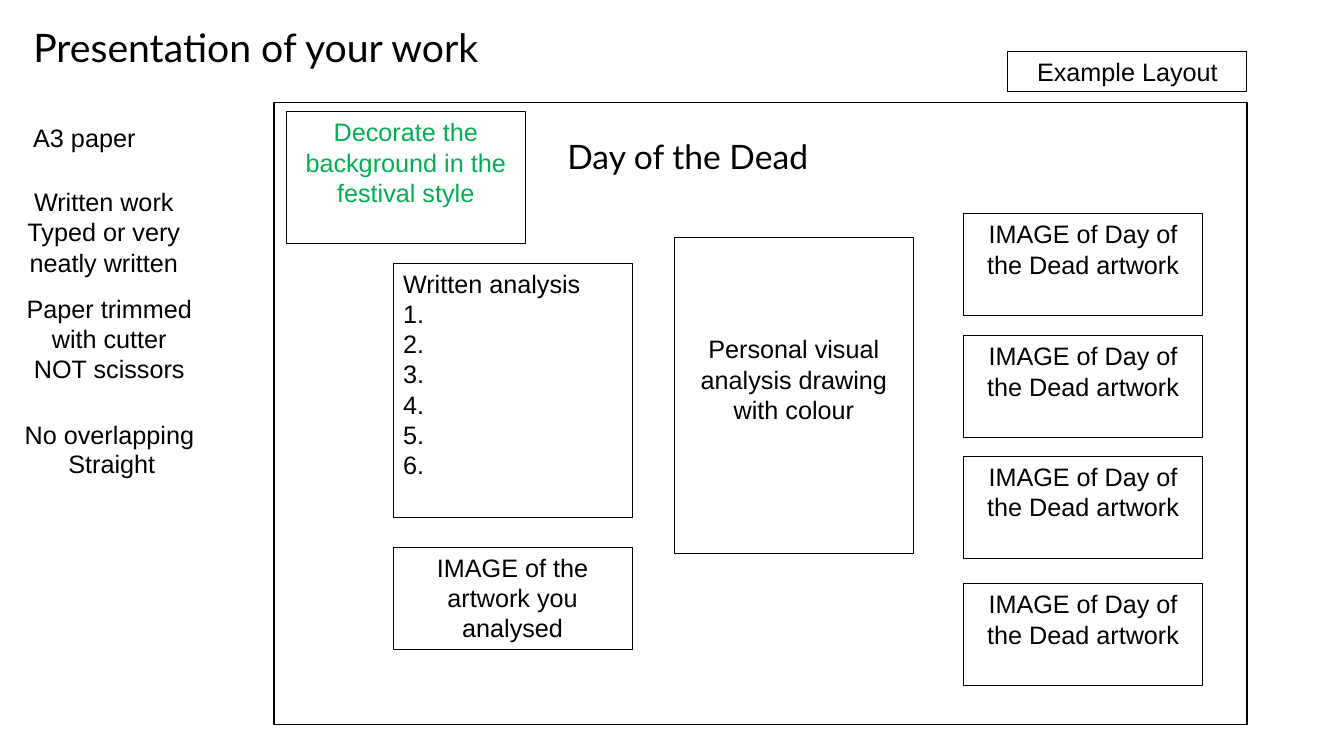
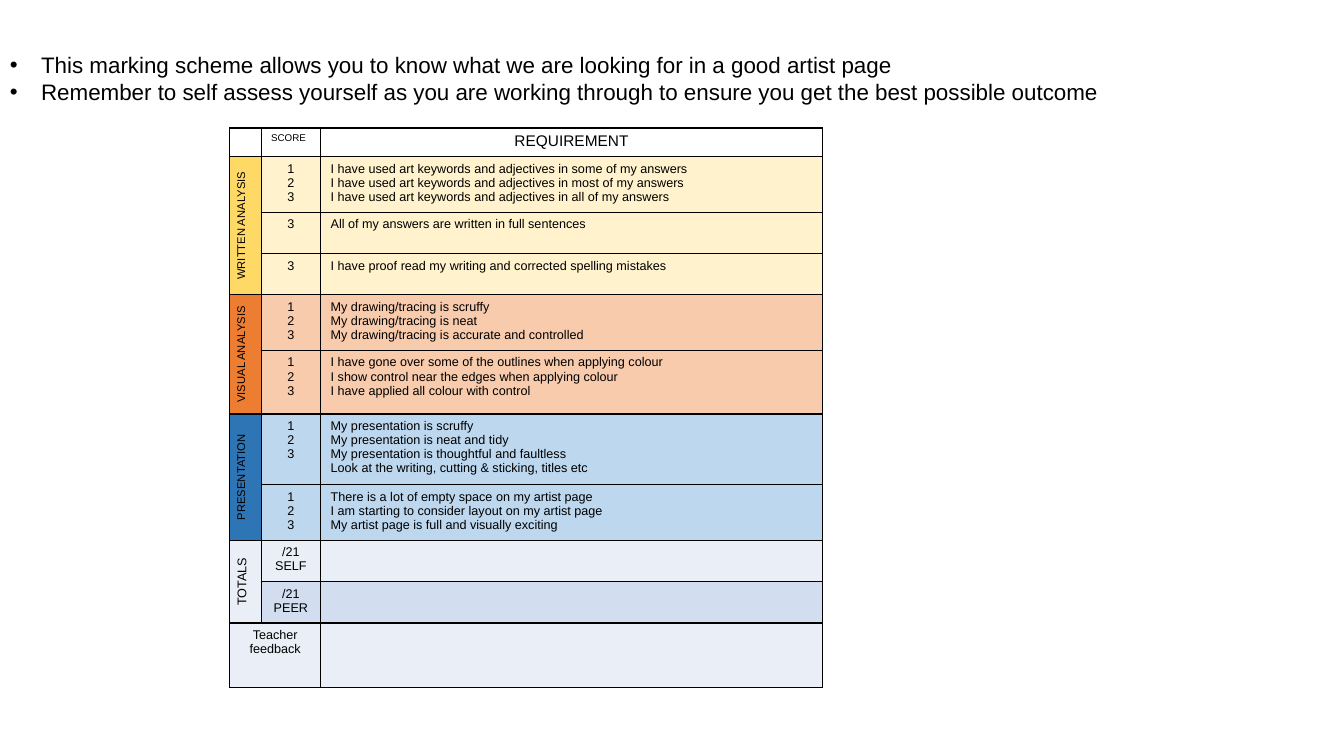
from lxml import etree
from pptx import Presentation
from pptx.dml.color import RGBColor
from pptx.enum.shapes import MSO_SHAPE
from pptx.enum.text import MSO_ANCHOR, PP_ALIGN
from pptx.oxml.ns import qn
from pptx.util import Inches, Pt

RECT = MSO_SHAPE.RECTANGLE
TOP = MSO_ANCHOR.TOP
LEFT, MID = PP_ALIGN.LEFT, PP_ALIGN.CENTER

BLACK = RGBColor(0x00, 0x00, 0x00)
WHITE = RGBColor(0xFF, 0xFF, 0xFF)
GREEN = RGBColor(0x00, 0xB0, 0x50)
GOLD = RGBColor(0xFF, 0xD9, 0x66)
CREAM = RGBColor(0xFF, 0xF2, 0xCC)
RUST = RGBColor(0xED, 0x7D, 0x31)
PEACH = RGBColor(0xF8, 0xCB, 0xAD)
BLUE = RGBColor(0x2E, 0x75, 0xB6)
SKY = RGBColor(0xBD, 0xD7, 0xEE)
MIST = RGBColor(0xEA, 0xEF, 0xF7)
HAZE = RGBColor(0xD2, 0xDE, 0xEF)

WIDE, HIGH = Inches(13.33), Inches(7.5)
BODY, HEAD = "Arial", "Lato"
BOX = 17.78
LINE = 5.33
TRIO = 13.47
DENT = Inches(0.31)

NOTES = [
    ("A3 paper", 1.73, 15.47, 10.73, LINE, LEFT),
    ("Written work\nTyped or very\nneatly written", -0.6, 24, 16.65, TRIO, MID),
    ("Paper trimmed\nwith cutter\nNOT scissors", -0.38, 38.13, 17.03, TRIO, MID),
    ("No overlapping", -0.15, 54.8, 16.58, LINE, MID),
    ("Straight", 3.6, 58.67, 9.45, LINE, MID),
]

TIPS = (
    "This marking scheme allows you to know what we are looking for in a good artist page\n"
    "Remember to self assess yourself as you are working through to ensure you get the best possible outcome"
)

MARKS = "1\n2\n3"
GROUPS = [
    ("WRITTEN ANALYSIS", 8, GOLD, [
        (MARKS, "I have used art keywords and adjectives in some of my answers\n"
                "I have used art keywords and adjectives in most of my answers\n"
                "I have used art keywords and adjectives in all of my answers", CREAM),
        ("3", "All of my answers are written in full sentences", CREAM),
        ("3", "I have proof read my writing and corrected spelling mistakes", CREAM),
    ]),
    ("VISUAL ANALYSIS", 8, RUST, [
        (MARKS, "My drawing/tracing is scruffy\n"
                "My drawing/tracing is neat\n"
                "My drawing/tracing is accurate and controlled", PEACH),
        (MARKS, "I have gone over some of the outlines when applying colour\n"
                "I show control near the edges when applying colour\n"
                "I have applied all colour with control", PEACH),
    ]),
    ("PRESENTATION", 8, BLUE, [
        (MARKS, "My presentation is scruffy\n"
                "My presentation is neat and tidy\n"
                "My presentation is thoughtful and faultless\n"
                "Look at the writing, cutting & sticking, titles etc", SKY),
        (MARKS, "There is a lot of empty space on my artist page\n"
                "I am starting to consider layout on my artist page\n"
                "My artist page is full and visually exciting", SKY),
    ]),
    ("TOTALS", 9, MIST, [
        ("/21\nSELF", "", MIST),
        ("/21\nPEER", "", HAZE),
    ]),
]
COLS = [2.33, 4.43, 37.35]
ROWS = [2.93] + [5.47] * 4 + [8.4] + [5.47] * 4 + [8.53]


def across(share):
    return round(WIDE * share / 100)


def down(share):
    return round(HIGH * share / 100)


def area(x, y, w, h):
    return across(x), down(y), across(w), down(h)


def bullet(para):
    props = para._p.get_or_add_pPr()
    props.set("marL", str(DENT))
    props.set("indent", str(-DENT))
    etree.SubElement(props, qn("a:buFont")).set("typeface", BODY)
    etree.SubElement(props, qn("a:buChar")).set("char", "•")


def write(frame, text, size=18, font=BODY, color=BLACK, align=LEFT, dots=False):
    for pos, line in enumerate(text.split("\n")):
        para = frame.add_paragraph() if pos else frame.paragraphs[0]
        para.alignment = align
        if dots:
            bullet(para)
        if not line:
            para._p.get_or_add_endParaRPr().set("sz", str(size * 100))
            continue
        run = para.add_run()
        run.text = line
        run.font.size = Pt(size)
        run.font.name = font
        run.font.color.rgb = color


def label(slide, text, spot, **style):
    frame = slide.shapes.add_textbox(*area(*spot)).text_frame
    frame.word_wrap = True
    write(frame, text, **style)


def panel(slide, text, spot, line=0.75, fill=None, drop=0.05, align=MID, **style):
    shape = slide.shapes.add_shape(RECT, *area(*spot))
    shape.shadow.inherit = False
    if fill is None:
        shape.fill.background()
    else:
        shape.fill.solid()
        shape.fill.fore_color.rgb = fill
    shape.line.color.rgb = BLACK
    shape.line.width = Pt(line)
    if text:
        frame = shape.text_frame
        frame.word_wrap = True
        frame.vertical_anchor = TOP
        frame.margin_top = Inches(drop)
        write(frame, text, align=align, **style)


def title(slide, text, spot):
    head = slide.shapes.title
    head.left, head.top, head.width, head.height = area(*spot)
    head.text_frame.vertical_anchor = TOP
    head.text_frame.word_wrap = True
    write(head.text_frame, text, size=28, font=HEAD)


def border(cell):
    props = cell._tc.get_or_add_tcPr()
    for pos, side in enumerate(("lnL", "lnR", "lnT", "lnB")):
        edge = etree.Element(qn("a:" + side), w=str(Pt(1)))
        fill = etree.SubElement(edge, qn("a:solidFill"))
        etree.SubElement(fill, qn("a:srgbClr"), val=str(BLACK))
        props.insert(pos, edge)


def paint(cell, fill):
    cell.fill.solid()
    cell.fill.fore_color.rgb = fill
    border(cell)


def enter(cell, text, fill, turn=False, size=9, align=MID):
    paint(cell, fill)
    write(cell.text_frame, text, size=size, align=align)
    if turn:
        cell._tc.get_or_add_tcPr().set("vert", "vert270")


def scheme(slide, x, y):
    spot = area(x, y, sum(COLS), sum(ROWS))
    table = slide.shapes.add_table(len(ROWS), len(COLS), *spot).table
    table.first_row = table.horz_banding = False
    for col, share in zip(table.columns, COLS):
        col.width = across(share)
    for row, share in zip(table.rows, ROWS):
        row.height = down(share)

    enter(table.cell(0, 0), "", WHITE, size=7)
    enter(table.cell(0, 1), "SCORE", WHITE, size=7, align=LEFT)
    enter(table.cell(0, 2), "REQUIREMENT", WHITE, size=11)

    top = 1
    for name, size, fill, tasks in GROUPS:
        end = top + len(tasks)
        enter(table.cell(top, 0), name, fill, turn=True, size=size)
        for row, (score, need, tint) in enumerate(tasks, top):
            if row > top:
                paint(table.cell(row, 0), fill)
            enter(table.cell(row, 1), score, tint)
            enter(table.cell(row, 2), need, tint, align=LEFT)
        table.cell(top, 0).merge(table.cell(end - 1, 0))
        top = end

    enter(table.cell(top, 0), "Teacher feedback", MIST)
    paint(table.cell(top, 1), MIST)
    enter(table.cell(top, 2), "", MIST)
    table.cell(top, 0).merge(table.cell(top, 1))


def layout(slide):
    title(slide, "Presentation of your work", (1.73, 2.4, 64.73, 7.6))
    for text, x, y, w, h, align in NOTES:
        label(slide, text, (x, y, w, h), align=align)
    panel(slide, "", (20.4, 13.6, 72.38, 82.27), line=1, fill=WHITE)
    label(slide, "Day of the Dead", (41.48, 17.33, 34.05, 6.67), size=24, font=HEAD)
    steps = "\n".join(f"{num}." for num in range(1, 7))
    panel(slide, "Written analysis\n" + steps, (29.25, 34.8, BOX, 33.6), align=LEFT)
    panel(slide, "IMAGE of the artwork you analysed", (29.25, 72.4, BOX, TRIO))
    for y in (28.27, 44.4, 60.4, 77.2):
        panel(slide, "IMAGE of Day of the Dead artwork", (71.7, y, BOX, TRIO))
    panel(slide, "Personal visual analysis drawing with colour",
          (50.18, 31.47, BOX, 41.73), drop=0.95)
    panel(slide, "Decorate the background in the festival style",
          (21.3, 14.8, BOX, 17.47), color=GREEN)
    panel(slide, "Example Layout", (75, 6.8, BOX, LINE))


def marking(slide):
    scheme(slide, 17.1, 16.93)
    label(slide, TIPS, (0, 6.13, 100, 8.53), size=16, dots=True)


def main():
    deck = Presentation()
    deck.slide_width, deck.slide_height = WIDE, HIGH
    layout(deck.slides.add_slide(deck.slide_layouts[5]))
    marking(deck.slides.add_slide(deck.slide_layouts[6]))
    deck.save("out.pptx")


if __name__ == "__main__":
    main()
